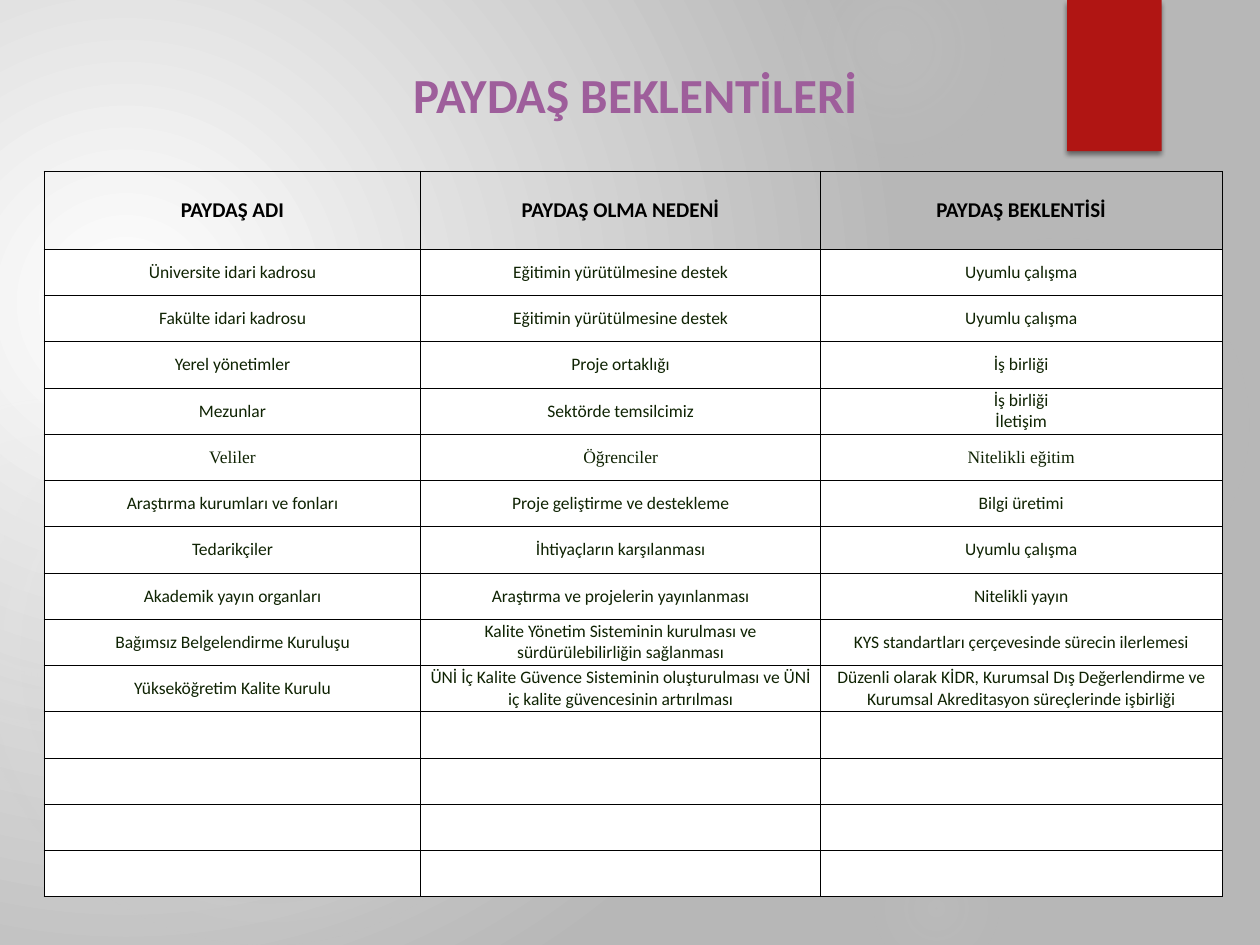
from lxml import etree
from pptx import Presentation
from pptx.dml.color import RGBColor
from pptx.enum.shapes import MSO_SHAPE as Shape
from pptx.enum.text import MSO_ANCHOR as Anchor, PP_ALIGN as Align
from pptx.oxml import parse_xml
from pptx.oxml.ns import nsdecls, qn
from pptx.util import Inches, Pt

WHITE = RGBColor(0xFF, 0xFF, 0xFF)
GREY = RGBColor(0xB7, 0xB7, 0xB7)
GLOW = RGBColor(0xD9, 0xD9, 0xD9)
RED = RGBColor(0xB0, 0x15, 0x13)
PURPLE = RGBColor(0x9E, 0x5E, 0x9B)
BLACK = RGBColor(0, 0, 0)
DARK_GREEN = RGBColor(0x0F, 0x23, 0x03)


def write_text(frame, text, size=10, color=DARK_GREEN, bold=False, font="Calibri"):
    frame.word_wrap = True
    para = frame.paragraphs[0]
    para.text = text
    para.alignment = Align.CENTER
    for span in para.runs:
        span.font.name = font
        span.font.size = Pt(size)
        span.font.bold = bold
        span.font.color.rgb = color


def radial_fill(parent, stops, center=(50, 50, 50, 50)):
    """Swap the solid fill of parent for a circular gradient of (place, colour, opacity)."""
    marks = "".join(
        f'<a:gs pos="{place * 1000}"><a:srgbClr val="{color}">'
        f'<a:alpha val="{opacity * 1000}"/></a:srgbClr></a:gs>'
        for place, color, opacity in stops)
    left, top, right, bottom = (share * 1000 for share in center)
    gradient = parse_xml(
        f'<a:gradFill {nsdecls("a")} rotWithShape="1"><a:gsLst>{marks}</a:gsLst>'
        f'<a:path path="circle"><a:fillToRect l="{left}" t="{top}" r="{right}" b="{bottom}"/>'
        f'</a:path></a:gradFill>')
    parent.replace(parent.find(qn("a:solidFill")), gradient)


deck = Presentation()
deck.slide_width, deck.slide_height = Inches(10), Inches(7.5)
page = deck.slides.add_slide(deck.slide_layouts[6])

# Background
page.background.fill.solid()
page.background.fill.fore_color.rgb = WHITE
radial_fill(page.element.find(".//" + qn("p:bgPr")),
            [(0, WHITE, 100), (100, GREY, 100)], center=(45, 65, 125, 100))

# Soft glows: left, top, diameter, inner and middle opacity, place where they fade out
glows = [
    (6.89, 1.83, 3.08, 7, 6, 69),
    (6.22, -0.5, 1.75, 14, 7, 73),
    (6.89, 6.67, 1.08, 9, 5, 66),
    (-0.17, 2.92, 4.58, 11, 10, 75),
    (-0.92, 3.17, 2.58, 8, 8, 72),
]
for left, top, diameter, inner, middle, edge in glows:
    glow = page.shapes.add_shape(Shape.OVAL, Inches(left), Inches(top),
                                 Inches(diameter), Inches(diameter))
    glow.shadow.inherit = False
    glow.line.fill.background()
    glow.fill.solid()
    radial_fill(glow.element.spPr, [(0, GLOW, inner), (36, GLOW, middle), (edge, GLOW, 0)])

# Red ribbon with a shadow below
ribbon = page.shapes.add_shape(Shape.RECTANGLE, Inches(8.47), 0, Inches(0.75), Inches(1.2))
ribbon.shadow.inherit = False
ribbon.fill.solid()
ribbon.fill.fore_color.rgb = RED
ribbon.line.fill.background()
ribbon.element.spPr.find(qn("a:effectLst")).append(parse_xml(
    f'<a:outerShdw {nsdecls("a")} blurRad="{Pt(3)}" dist="{Pt(2)}" dir="5400000" '
    f'rotWithShape="0"><a:srgbClr val="{BLACK}"><a:alpha val="45000"/></a:srgbClr></a:outerShdw>'))

# Title
title = page.shapes.add_textbox(Inches(2.27), Inches(0.46), Inches(5.55), Inches(0.57))
write_text(title.text_frame, "PAYDAŞ BEKLENTİLERİ", size=28, color=PURPLE, bold=True)

# Stakeholder table
EMPTY_ROWS = 4
SERIF_ROW = "Veliler"
rows = [
    ("PAYDAŞ ADI", "PAYDAŞ OLMA NEDENİ", "PAYDAŞ BEKLENTİSİ"),
    ("Üniversite idari kadrosu", "Eğitimin yürütülmesine destek", "Uyumlu çalışma"),
    ("Fakülte idari kadrosu", "Eğitimin yürütülmesine destek", "Uyumlu çalışma"),
    ("Yerel yönetimler", "Proje ortaklığı", "İş birliği"),
    ("Mezunlar", "Sektörde temsilcimiz", "İş birliği\vİletişim"),
    (SERIF_ROW, "Öğrenciler", "Nitelikli eğitim"),
    ("Araştırma kurumları ve fonları", "Proje geliştirme ve destekleme", "Bilgi üretimi"),
    ("Tedarikçiler", "İhtiyaçların karşılanması", "Uyumlu çalışma"),
    ("Akademik yayın organları", "Araştırma ve projelerin yayınlanması", "Nitelikli yayın"),
    ("Bağımsız Belgelendirme Kuruluşu",
     "Kalite Yönetim Sisteminin kurulması ve sürdürülebilirliğin sağlanması",
     "KYS standartları çerçevesinde sürecin ilerlemesi"),
    ("Yükseköğretim Kalite Kurulu",
     "ÜNİ İç Kalite Güvence Sisteminin oluşturulması ve ÜNİ iç kalite güvencesinin artırılması",
     "Düzenli olarak KİDR, Kurumsal Dış Değerlendirme ve "
     "Kurumsal Akreditasyon süreçlerinde işbirliği"),
] + [("", "", "")] * EMPTY_ROWS

column_widths = (2.99, 3.17, 3.19)
table_height, header_height = 5.76, 0.62
body_height = (table_height - header_height) / (len(rows) - 1)
table = page.shapes.add_table(len(rows), len(column_widths), Inches(0.35), Inches(1.36),
                              Inches(sum(column_widths)), Inches(table_height)).table
table.first_row = table.horz_banding = False
for column, width in zip(table.columns, column_widths):
    column.width = Inches(width)

for number, texts in enumerate(rows):
    header = number == 0
    table.rows[number].height = Inches(header_height if header else body_height)
    for cell, text in zip(table.rows[number].cells, texts):
        cell.vertical_anchor = Anchor.MIDDLE
        cell.margin_top = cell.margin_bottom = 0
        cell.margin_left = cell.margin_right = Inches(0 if header else 0.03)
        if header:
            write_text(cell.text_frame, text, size=12, color=BLACK, bold=True)
        else:
            font = "Times New Roman" if texts[0] == SERIF_ROW else "Calibri"
            write_text(cell.text_frame, text, font=font)

        # Borders come before the fill in the cell properties
        properties = cell._tc.get_or_add_tcPr()
        for side in ("lnL", "lnR", "lnT", "lnB"):
            border = etree.SubElement(properties, qn(f"a:{side}"), w=str(Pt(0.5)))
            solid = etree.SubElement(border, qn("a:solidFill"))
            etree.SubElement(solid, qn("a:srgbClr"), val=str(BLACK))
        if header:
            cell.fill.background()
        else:
            cell.fill.solid()
            cell.fill.fore_color.rgb = WHITE

deck.save("out.pptx")
